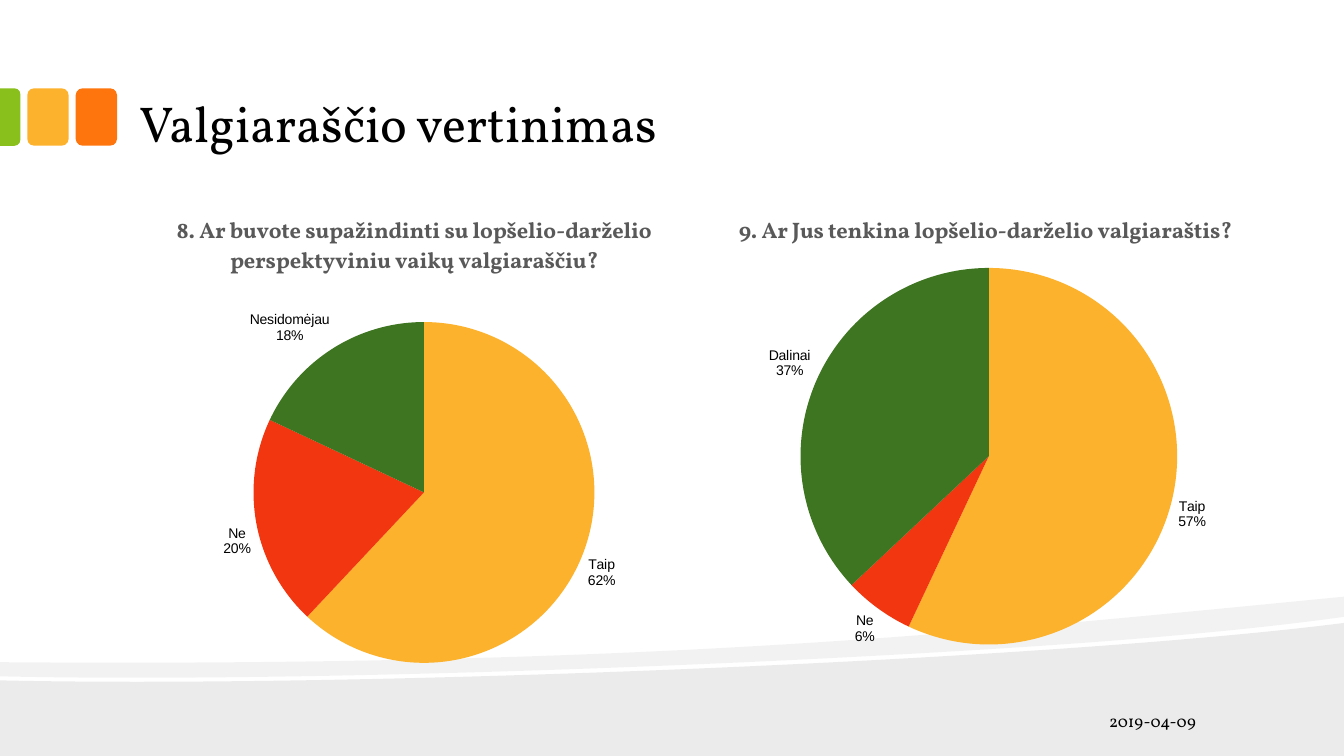
from pptx import Presentation
from pptx.util import Inches, Pt
from pptx.dml.color import RGBColor as Rgb
from pptx.chart.data import CategoryChartData as Data
from pptx.enum.chart import XL_CHART_TYPE as Kind, XL_LABEL_POSITION as Pos
from pptx.enum.shapes import MSO_SHAPE as Form
from pptx.enum.text import MSO_ANCHOR as Anchor, PP_ALIGN as Align
from pptx.oxml import parse_xml as from_xml
from pptx.oxml.ns import nsdecls, qn
from lxml.etree import SubElement

theme = {
    "ink": "000000", "gray": "595959",
    "lime": "89C01C", "gold": "FCB22C", "orange": "FE750E",
    "pie": ["FCB22C", "F23610", "3E7520"],
    "serif": "Vollkorn", "sans": "Arial",
    "title": 36, "head": 16, "date": 12, "label": 10,
}

deck = Presentation()
deck.slide_width, deck.slide_height = Inches(13.33), Inches(7.5)
col, row = deck.slide_width / 100, deck.slide_height / 100
slide = deck.slides.add_slide(deck.slide_layouts[6])
shapes = slide.shapes


def grid(x, y, w, h):
    return round(x * col), round(y * row), round(w * col), round(h * row)


def style(font, face, size, color, bold=False):
    font.name, font.size, font.bold = face, Pt(size), bold
    font.color.rgb = Rgb.from_string(color)


waves = [
    (8, (0, 90), [
        [(26.41, 91.07), (78.17, 87.33), (100, 82.4)],
        [(100, 100)], [(0, 100)]]),
    (5, (0, 87.6), [
        [(48.91, 88.27), (72.84, 83.6), (100, 78.93)],
        [(100, 81.6)],
        [(94.15, 83.07), (86.2, 84.4), (77.19, 85.47)],
        [(52.36, 88.4), (19.35, 90.27), (0, 89.47)]]),
]
for alpha, start, bits in waves:
    pen = shapes.build_freeform(start[0] * col, start[1] * row)
    pen.add_line_segments([(x * col, y * row) for bit in bits for x, y in bit], close=True)
    wave = pen.convert_to_shape()
    lines = iter(list(wave._element.iter(qn("a:lnTo"))))
    for bit in bits:
        group = [next(lines) for dot in bit]
        if len(group) == 3:
            bend = from_xml(f"<a:cubicBezTo {nsdecls('a')}/>")
            group[0].addprevious(bend)
            for line in group:
                bend.append(line[0])
                line.getparent().remove(line)
    wave.shadow.inherit = False
    wave.line.fill.background()
    wave.fill.solid()
    wave.fill.fore_color.rgb = Rgb.from_string(theme["ink"])
    tint = wave.fill._xPr.find(".//" + qn("a:srgbClr"))
    SubElement(tint, qn("a:alpha")).set("val", str(alpha * 1000))

tiles = [
    (Form.ROUNDED_RECTANGLE, (5.63, 11.68, 3.08, 7.6), 0, "orange", [0.17]),
    (Form.ROUNDED_RECTANGLE, (2.03, 11.68, 3.08, 7.6), 0, "gold", [0.17]),
    (Form.ROUND_2_SAME_RECTANGLE, (-1.38, 14.15, 4.28, 2.67), 90, "lime", [0.29, 0]),
]
for form, place, turn, color, bends in tiles:
    tile = shapes.add_shape(form, *grid(*place))
    tile.rotation = turn
    for i, bend in enumerate(bends):
        tile.adjustments[i] = bend
    tile.shadow.inherit = False
    tile.line.fill.background()
    tile.fill.solid()
    tile.fill.fore_color.rgb = Rgb.from_string(theme[color])

charts = [
    (49.41, "9. Ar Jus tenkina lopšelio-darželio valgiaraštis?",
     ["Taip", "Ne", "Dalinai"], [57, 6, 37], (0.21, 0.15, 0.59, 0.78)),
    (6.9, "8. Ar buvote supažindinti su lopšelio-darželio perspektyviniu vaikų valgiaraščiu?",
     ["Taip", "Ne", "Nesidomėjau"], [62, 20, 18], (0.25, 0.26, 0.53, 0.71)),
]
for left, head, names, votes, area in charts:
    data = Data()
    data.categories = names
    data.add_series(head, votes)
    chart = shapes.add_chart(Kind.PIE, *grid(left, 25.87, 47.86, 63.87), data).chart
    style(chart.font, theme["sans"], theme["label"], theme["ink"])
    chart.has_legend = False
    chart.has_title = True
    para = chart.chart_title.text_frame.paragraphs[0]
    para.text = head
    style(para.runs[0].font, theme["serif"], theme["head"], theme["gray"], True)
    chart.chart_title.include_in_layout = False

    plot = chart.plots[0]
    plot.vary_by_categories = True
    for i, color in enumerate(theme["pie"]):
        part = plot.series[0].points[i].format
        part.fill.solid()
        part.fill.fore_color.rgb = Rgb.from_string(color)
        part.line.fill.background()
    plot.has_data_labels = True
    tags = plot.data_labels
    tags.show_value = False
    tags.show_category_name = tags.show_percentage = True
    tags.number_format, tags.number_format_is_linked = "0%", False
    tags.position = Pos.OUTSIDE_END
    style(tags.font, theme["sans"], theme["label"], theme["ink"])
    tags._element.find(qn("c:showBubbleSize")).addnext(
        from_xml(f"<c:separator {nsdecls('c')}>\n</c:separator>"))

    frame = chart._chartSpace.find(".//" + qn("c:plotArea"))
    for old in frame.findall(qn("c:layout")):
        frame.remove(old)
    marks = [("layoutTarget", "inner"), ("xMode", "edge"), ("yMode", "edge"), *zip("xywh", area)]
    rules = "".join(f'<c:{name} val="{val}"/>' for name, val in marks)
    frame.insert(0, from_xml(
        f"<c:layout {nsdecls('c')}><c:manualLayout>{rules}</c:manualLayout></c:layout>"))

texts = [
    ("Valgiaraščio vertinimas", (9.38, 2.2, 79.97, 18.93), "title", Anchor.BOTTOM, Align.LEFT),
    ("2019-04-09", (78.32, 94, 11.63, 2.67), "date", Anchor.MIDDLE, Align.RIGHT),
]
for words, place, size, anchor, align in texts:
    frame = shapes.add_textbox(*grid(*place)).text_frame
    frame.word_wrap = True
    frame.vertical_anchor = anchor
    frame.margin_left = frame.margin_right = Inches(0.13)
    frame.margin_top = frame.margin_bottom = Inches(0.07)
    frame.text = words
    para = frame.paragraphs[0]
    para.alignment = align
    style(para.runs[0].font, theme["serif"], theme[size], theme["ink"])

deck.save("out.pptx")
